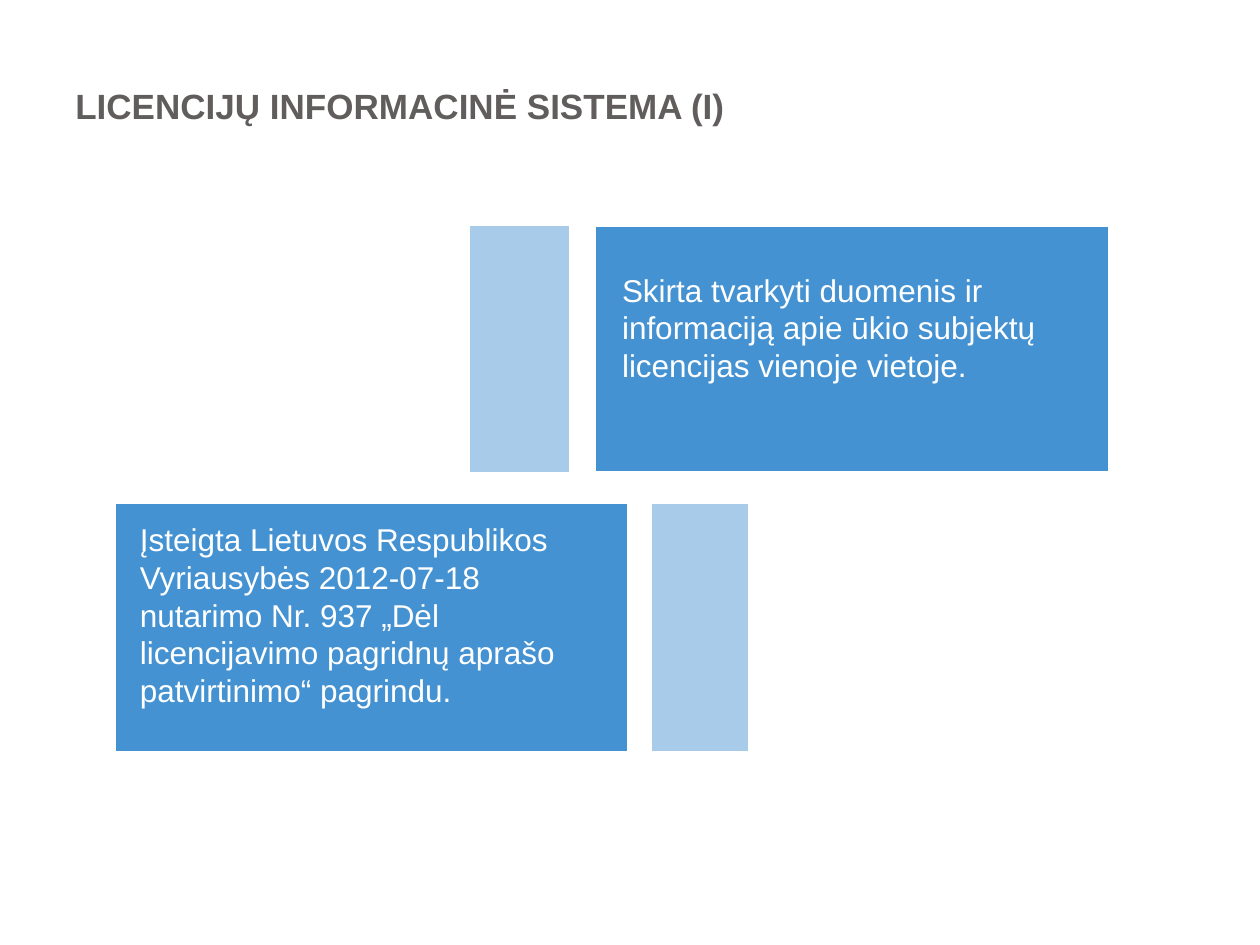
from dataclasses import dataclass

from lxml import etree
from pptx import Presentation
from pptx import util as u
from pptx.dml.color import RGBColor
from pptx.enum import shapes, text
from pptx.oxml.ns import qn


@dataclass(frozen=True)
class Theme:
    font: str = "Arial"
    blue: str = "4492D2"
    white: str = "FFFFFF"
    grey: str = "605D5C"
    title_size: int = 20
    body_size: int = 18
    line_width: int = 2
    pale_alpha: int = 47


class SlideBuilder:
    def __init__(self, slide, theme):
        self.s = slide
        self.theme = theme

    def block(self, box, alpha=None):
        """Add a blue rectangle; alpha is its opacity in percent."""
        sp = self.s.shapes.add_shape(
            shapes.MSO_SHAPE.RECTANGLE, *map(u.Cm, box))
        sp.shadow.inherit = False
        sp.fill.solid()
        sp.fill.fore_color.rgb = RGBColor.from_string(self.theme.blue)
        if alpha is not None:
            color = sp.fill._xPr.find(".//" + qn("a:srgbClr"))
            etree.SubElement(color, qn("a:alpha"), val=str(alpha * 1000))
        sp.line.color.rgb = RGBColor.from_string(self.theme.white)
        sp.line.width = u.Pt(self.theme.line_width)

    def label(self, box, words, size, color, bold=False,
              anchor=text.MSO_ANCHOR.TOP):
        sp = self.s.shapes.add_textbox(*map(u.Cm, box))
        tf = sp.text_frame
        frame_format = {"word_wrap": True, "vertical_anchor": anchor}
        for name, value in frame_format.items():
            setattr(tf, name, value)
        r = tf.paragraphs[0].add_run()
        r.text = words
        font_format = {"name": self.theme.font, "size": u.Pt(size), "bold": bold}
        for name, value in font_format.items():
            setattr(r.font, name, value)
        r.font.color.rgb = RGBColor.from_string(color)


def main():
    theme = Theme()
    prs = Presentation()
    prs.slide_width, prs.slide_height = u.Cm(25.4), u.Cm(19.05)
    page = SlideBuilder(prs.slides.add_slide(prs.slide_layouts[6]), theme)

    page.label((1.27, 0.53, 22.86, 3.18), "LICENCIJŲ INFORMACINĖ SISTEMA (I)",
               theme.title_size, theme.grey, bold=True,
               anchor=text.MSO_ANCHOR.MIDDLE)

    # Each row: pale bar, solid panel, text area, text
    rows = [
        ((9.45, 4.52, 2.06, 5.03), (11.99, 4.55, 10.39, 4.98),
         (12.29, 5.33, 10.11, 2.57),
         "Skirta tvarkyti duomenis ir informaciją apie ūkio subjektų "
         "licencijas vienoje vietoje."),
        ((13.11, 10.13, 2.01, 5.05), (2.31, 10.13, 10.36, 5.05),
         (2.57, 10.36, 9.8, 4.11),
         "Įsteigta Lietuvos Respublikos Vyriausybės 2012-07-18 nutarimo "
         "Nr. 937 „Dėl licencijavimo pagridnų aprašo patvirtinimo“ pagrindu."),
    ]
    for bar, panel, area, words in rows:
        page.block(bar, theme.pale_alpha)
        page.block(panel)
        page.label(area, words, theme.body_size, theme.white)

    prs.save("out.pptx")


if __name__ == "__main__":
    main()
